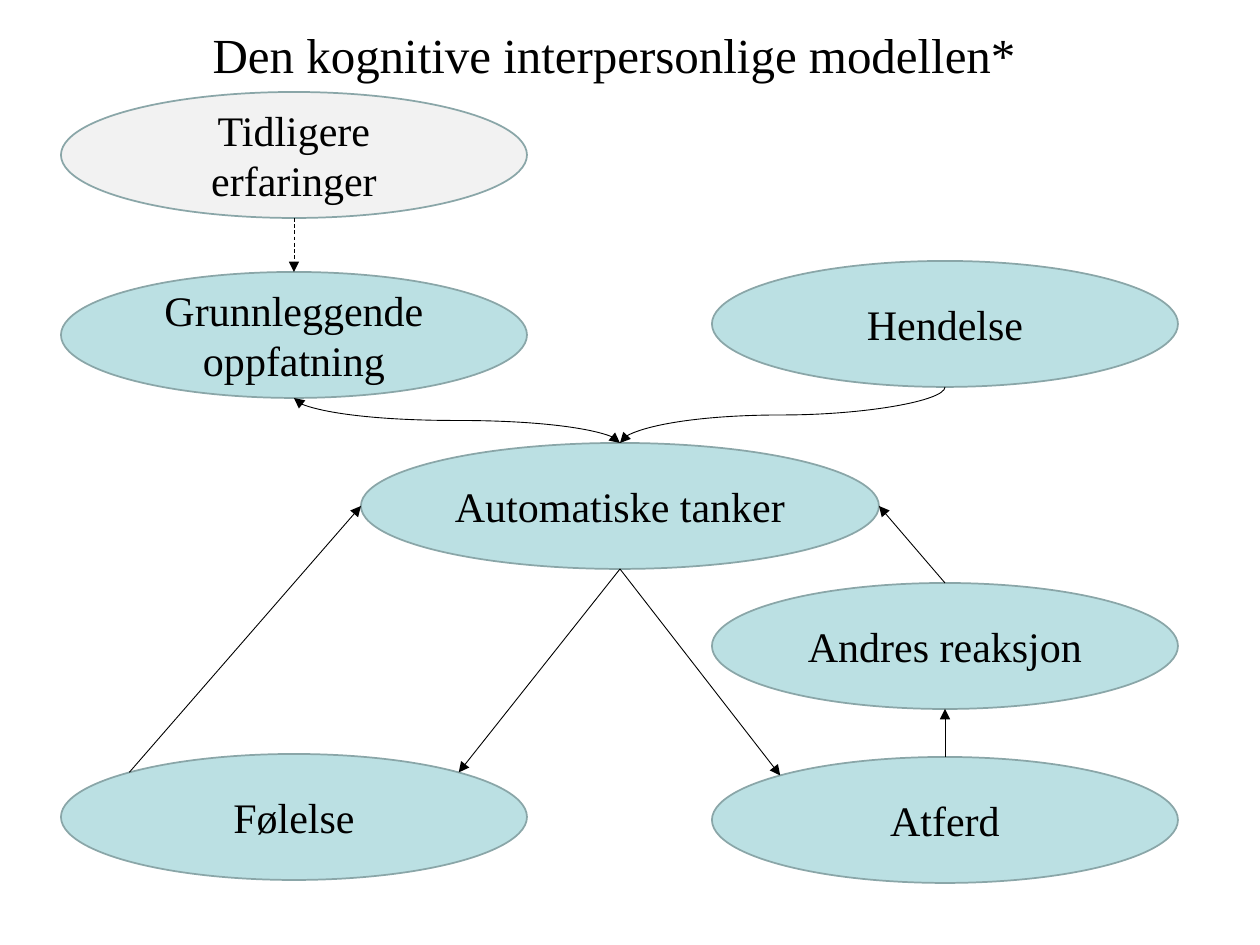
from math import cos, pi, sin

from lxml.etree import SubElement
from pptx import Presentation
from pptx.dml.color import RGBColor
from pptx.enum.dml import MSO_LINE
from pptx.enum.shapes import MSO_CONNECTOR as LINK, MSO_SHAPE
from pptx.enum.text import MSO_ANCHOR, MSO_AUTO_SIZE, PP_ALIGN
from pptx.oxml.ns import qn
from pptx.util import Pt

PX = 914400 / 126
FONT = "Times New Roman"
COLORS = {"ink": "000000", "node": "BBE0E3", "past": "F2F2F2", "rim": "8AA6A8"}

# Connection sites of an ellipse, counter-clockwise from the top
TOP, TOP_LEFT, LEFT, BOTTOM_LEFT, BOTTOM, BOTTOM_RIGHT, RIGHT, TOP_RIGHT = range(8)


def emu(px):
    return round(px * PX)


def color(name):
    return RGBColor.from_string(COLORS[name])


def site_point(oval, site):
    angle = pi / 2 + site * pi / 4
    x = oval.left + oval.width / 2 * (1 + cos(angle))
    y = oval.top + oval.height / 2 * (1 - sin(angle))
    return round(x), round(y)


class ModelSlide:
    """Style and drawing methods for the current slide."""

    def __init__(self, slide):
        self.slide = slide

    def set_text(self, frame, text, size, align):
        frame.text = text
        for paragraph in frame.paragraphs:
            paragraph.alignment = align
            for run in paragraph.runs:
                run.font.name = FONT
                run.font.size = Pt(size)
                run.font.color.rgb = color("ink")

    def title(self, text, left, top, width, height):
        heading = self.slide.shapes.title
        heading.left, heading.top = emu(left), emu(top)
        heading.width, heading.height = emu(width), emu(height)
        frame = heading.text_frame
        frame.word_wrap = False
        frame.auto_size = MSO_AUTO_SIZE.SHAPE_TO_FIT_TEXT
        frame.vertical_anchor = MSO_ANCHOR.TOP
        self.set_text(frame, text, 28, PP_ALIGN.LEFT)

    def oval(self, text, left, top, width=466, height=126, fill="node"):
        oval = self.slide.shapes.add_shape(
            MSO_SHAPE.OVAL, emu(left), emu(top), emu(width), emu(height))
        oval.shadow.inherit = False
        oval.fill.solid()
        oval.fill.fore_color.rgb = color(fill)
        oval.line.color.rgb = color("rim")
        oval.line.width = Pt(1)
        oval.text_frame.word_wrap = True
        oval.text_frame.vertical_anchor = MSO_ANCHOR.MIDDLE
        self.set_text(oval.text_frame, text, 24, PP_ALIGN.CENTER)
        return oval

    def arrow(self, source, start, target, end, dashed=False):
        link = self.slide.shapes.add_connector(
            LINK.STRAIGHT, *site_point(source, start), *site_point(target, end))
        self.finish(link, source, start, target, end)
        if dashed:
            link.line.dash_style = MSO_LINE.DASH

    def curve(self, source, target, both_ends=False):
        """S-curve from the bottom of source down to the top of target."""
        (x1, y1), (x2, y2) = site_point(source, BOTTOM), site_point(target, TOP)
        middle_x, middle_y = (x1 + x2) // 2, (y1 + y2) // 2
        half_drop, half_span = (y2 - y1) // 2, abs(x2 - x1) // 2
        # The preset runs sideways, so it is laid out turned and then rotated
        turn, side = (270, 1) if x2 > x1 else (90, -1)
        link = self.slide.shapes.add_connector(
            LINK.CURVE,
            middle_x + side * half_drop, middle_y - half_span,
            middle_x - side * half_drop, middle_y + half_span)
        link._element.spPr.find(qn("a:xfrm")).set("rot", str(turn * 60000))
        self.finish(link, source, BOTTOM, target, TOP, both_ends)

    def finish(self, link, source, start, target, end, both_ends=False):
        link.line.color.rgb = color("ink")
        link.line.width = Pt(0.5)
        line = link._element.spPr.find(qn("a:ln"))
        if both_ends:
            SubElement(line, qn("a:headEnd"), type="triangle")
        SubElement(line, qn("a:tailEnd"), type="triangle")
        SubElement(link._element.spPr, qn("a:effectLst"))
        glue = link._element.nvCxnSpPr.cNvCxnSpPr
        for tag, oval, site in (("a:stCxn", source, start), ("a:endCxn", target, end)):
            SubElement(glue, qn(tag), id=str(oval.shape_id), idx=str(site))


def main():
    deck = Presentation()
    deck.slide_width, deck.slide_height = emu(1260), emu(945)
    model = ModelSlide(deck.slides.add_slide(deck.slide_layouts[5]))
    model.title("Den kognitive interpersonlige modellen*", 200, 18, 837, 72)

    # Ovals: left column, right column and the centre
    left, right = 61, 712
    experiences = model.oval("Tidligere erfaringer", left, 92, fill="past")
    belief = model.oval("Grunnleggende\noppfatning", left, 272)
    feeling = model.oval("Følelse", left, 754)
    event = model.oval("Hendelse", right, 261)
    reaction = model.oval("Andres reaksjon", right, 583)
    behaviour = model.oval("Atferd", right, 757)
    thoughts = model.oval("Automatiske tanker", 361, 443, width=518)

    # What leads to the thoughts
    model.arrow(experiences, BOTTOM, belief, TOP, dashed=True)
    model.curve(belief, thoughts, both_ends=True)
    model.curve(event, thoughts)

    # What the thoughts lead to, and back again
    model.arrow(thoughts, BOTTOM, feeling, TOP_RIGHT)
    model.arrow(thoughts, BOTTOM, behaviour, TOP_LEFT)
    model.arrow(feeling, TOP_LEFT, thoughts, LEFT)
    model.arrow(behaviour, TOP, reaction, BOTTOM)
    model.arrow(reaction, TOP, thoughts, RIGHT)

    deck.save("out.pptx")


if __name__ == "__main__":
    main()
